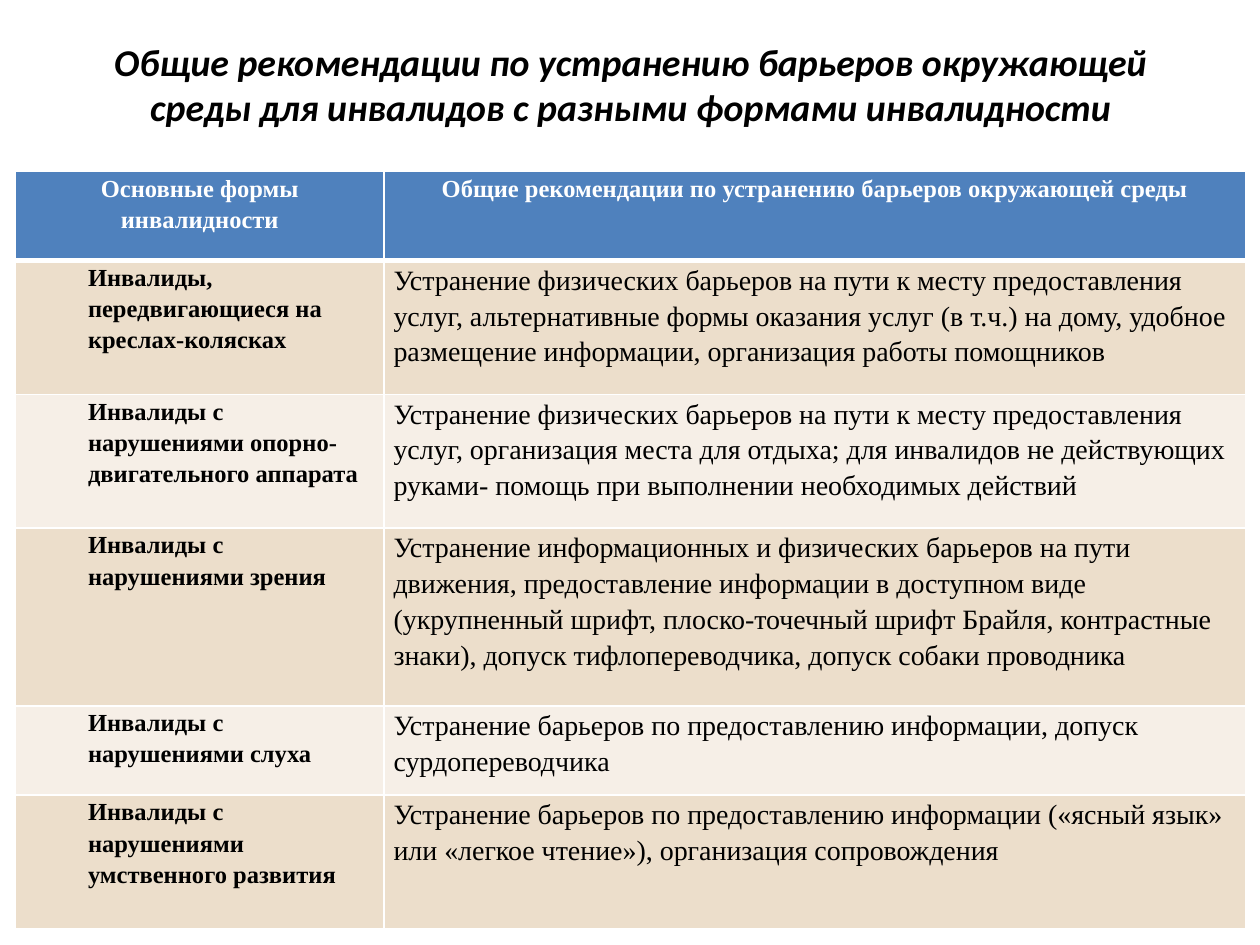
from lxml import etree
from pptx import Presentation
from pptx import util as u
from pptx.dml import color
from pptx.enum import text
from pptx.oxml import ns

Pt = u.Pt

COLORS = {
    "header": "4F81BD",
    "dark_band": "ECDECB",
    "light_band": "F6EFE7",
    "white": "FFFFFF",
    "black": "000000",
}

TITLE = ("Общие рекомендации по устранению барьеров окружающей среды "
         "для инвалидов с разными формами инвалидности")

HEADERS = ("Основные формы инвалидности",
           "Общие рекомендации по устранению барьеров окружающей среды")

# Form of disability, recommendation, row height
ROWS = [
    ("Инвалиды, передвигающиеся на креслах-колясках",
     "Устранение физических барьеров на пути к месту предоставления услуг, "
     "альтернативные формы оказания услуг (в т.ч.) на дому, удобное "
     "размещение информации, организация работы помощников", 76.4),
    ("Инвалиды с нарушениями опорно-двигательного аппарата",
     "Устранение физических барьеров на пути к месту предоставления услуг, "
     "организация места для отдыха; для инвалидов не действующих руками- "
     "помощь при выполнении необходимых действий", 76.4),
    ("Инвалиды с нарушениями зрения",
     "Устранение информационных и физических барьеров на пути движения, "
     "предоставление информации в доступном виде (укрупненный шрифт, "
     "плоско-точечный шрифт Брайля, контрастные знаки), допуск "
     "тифлопереводчика, допуск собаки проводника", 101.6),
    ("Инвалиды с нарушениями слуха",
     "Устранение барьеров по предоставлению информации, допуск "
     "сурдопереводчика", 51),
    ("Инвалиды с нарушениями умственного развития",
     "Устранение барьеров по предоставлению информации («ясный язык» или "
     "«легкое чтение»), организация сопровождения", 76.4),
]
HEADER_HEIGHT = 51
COLUMN_WIDTHS = (210.6, 492.4)


def rgb(name):
    return color.RGBColor.from_string(COLORS[name])


def set_font(paragraph, name, size, color_name, bold, italic=False):
    font = paragraph.font
    font.name, font.size = name, Pt(size)
    font.bold, font.italic = bold, italic
    font.color.rgb = rgb(color_name)


def set_borders(cell, top=1, bottom=1):
    properties = cell._tc.get_or_add_tcPr()
    for side, width in (("L", 1), ("R", 1), ("T", top), ("B", bottom)):
        line = etree.SubElement(properties, ns.qn(f"a:ln{side}"), w=str(Pt(width)))
        fill = etree.SubElement(line, ns.qn("a:solidFill"))
        etree.SubElement(fill, ns.qn("a:srgbClr"), val=COLORS["white"])


def fill_cell(cell, words, fill, size, color_name="black", bold=False,
              centered=False, indent=0, top=1, bottom=1):
    set_borders(cell, top, bottom)
    cell.fill.solid()
    cell.fill.fore_color.rgb = rgb(fill)
    cell.margin_left = cell.margin_right = Pt(5.4)
    cell.margin_top = cell.margin_bottom = Pt(0)
    cell.text = words
    paragraph = cell.text_frame.paragraphs[0]
    paragraph.alignment = text.PP_ALIGN.CENTER if centered else text.PP_ALIGN.LEFT
    paragraph.line_spacing = 1.15
    paragraph.space_after = Pt(10)
    if indent:
        properties = paragraph._p.get_or_add_pPr()
        properties.set("marL", str(Pt(indent)))
        properties.set("indent", "0")
    set_font(paragraph, "Times New Roman", size, color_name, bold)


def add_title(slide):
    title = slide.shapes.title
    title.left, title.top, title.width, title.height = Pt(36.5), Pt(15), Pt(648), Pt(90)
    frame = title.text_frame
    frame.text = TITLE
    frame.word_wrap = True
    frame.auto_size = text.MSO_AUTO_SIZE.NONE
    frame.vertical_anchor = text.MSO_ANCHOR.MIDDLE
    frame.margin_bottom = Pt(28)  # lifts the two lines above the middle
    paragraph = frame.paragraphs[0]
    paragraph.alignment = text.PP_ALIGN.CENTER
    set_font(paragraph, "Calibri", 21.6, "black", True, True)


def add_recommendations(slide):
    heights = [HEADER_HEIGHT] + [height for _, _, height in ROWS]
    table = slide.shapes.add_table(
        len(heights), len(COLUMN_WIDTHS), Pt(8.9), Pt(98),
        Pt(sum(COLUMN_WIDTHS)), Pt(sum(heights))).table
    for column, width in zip(table.columns, COLUMN_WIDTHS):
        column.width = Pt(width)
    for row, height in zip(table.rows, heights):
        row.height = Pt(height)

    # Header row
    for index, words in enumerate(HEADERS):
        fill_cell(table.cell(0, index), words, "header", 14, "white",
                  bold=True, centered=True, bottom=3)

    # Banded body rows
    for index, (form, advice, _) in enumerate(ROWS, start=1):
        band = "dark_band" if index % 2 else "light_band"
        top = 3 if index == 1 else 1
        fill_cell(table.cell(index, 0), form, band, 14, bold=True, indent=36, top=top)
        fill_cell(table.cell(index, 1), advice, band, 16, top=top)


def main():
    presentation = Presentation()
    presentation.slide_width, presentation.slide_height = Pt(720), Pt(540)
    slide = presentation.slides.add_slide(presentation.slide_layouts[5])
    add_title(slide)
    add_recommendations(slide)
    presentation.save("out.pptx")


if __name__ == "__main__":
    main()
